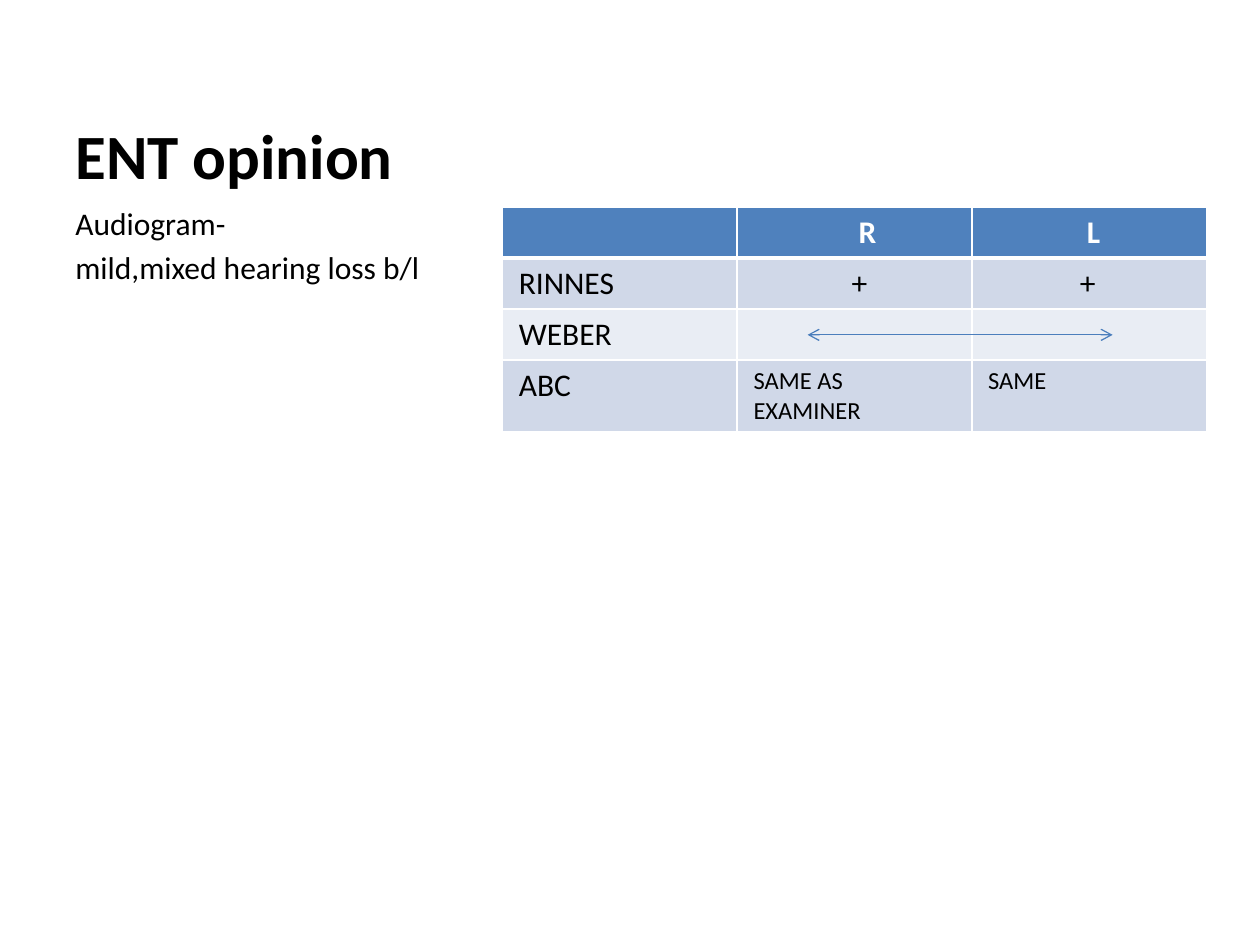
from lxml import etree
from pptx import Presentation
from pptx.dml.color import RGBColor
from pptx.enum.shapes import MSO_CONNECTOR
from pptx.enum.text import MSO_ANCHOR
from pptx.oxml.ns import qn
from pptx.util import Cm, Pt

STRAIGHT = MSO_CONNECTOR.STRAIGHT
TOP, BOTTOM = MSO_ANCHOR.TOP, MSO_ANCHOR.BOTTOM

BLACK, WHITE = "000000", "FFFFFF"
HEADER, BAND_DARK, BAND_LIGHT = "4F81BD", "D0D8E8", "E9EDF4"
ARROW = "4B7EBC"

ROWS = [
    ["", "R", "L"],
    ["RINNES", "+", "+"],
    ["WEBER", "", ""],
    ["ABC", "SAME AS EXAMINER", "SAME"],
]
ROW_HEIGHTS = [1.03, 1.03, 1.03, 1.45]
COL_WIDTH = 4.73
PAD = 0.33
# Left insets that bring the short entries near the middle of their cells
INSETS = {"R": (2.45, 2.32), "L": (2.45, 2.32), "+": (2.31, 2.18)}


def rgb(value):
    return RGBColor.from_string(value)


def style(p, size, color=BLACK, bold=False):
    fmt = {"name": "Calibri", "size": Pt(size), "bold": bold}
    for r in p.runs:
        for key, value in fmt.items():
            setattr(r.font, key, value)
        r.font.color.rgb = rgb(color)


def add_text(s, box, lines, size, bold=False, anchor=TOP):
    tf = s.shapes.add_textbox(*map(Cm, box)).text_frame
    tf.word_wrap = True
    tf.vertical_anchor = anchor
    for i, line in enumerate(lines):
        p = tf.add_paragraph() if i else tf.paragraphs[0]
        p.text = line
        if i:
            p.space_before = Pt(0.2 * size)
        style(p, size, bold=bold)


def set_borders(cell, widths):
    tc_pr = cell._tc.get_or_add_tcPr()
    for side, width in widths.items():
        ln = etree.SubElement(tc_pr, qn(f"a:ln{side}"), w=str(Pt(width)))
        fill = etree.SubElement(ln, qn("a:solidFill"))
        etree.SubElement(fill, qn("a:srgbClr"), val=WHITE)


def fill_cell(cell, row, col, text):
    # A thick rule parts the header from the body
    set_borders(cell, {"L": 1, "R": 1, "T": 3 if row == 1 else 1,
                       "B": 3 if row == 0 else 1})
    cell.fill.solid()
    bands = (BAND_LIGHT, BAND_DARK)
    cell.fill.fore_color.rgb = rgb(bands[row % 2] if row else HEADER)
    inset = INSETS[text][col - 1] if text in INSETS else PAD
    cell.margin_left, cell.margin_right = Cm(inset), Cm(PAD)
    if text:
        p = cell.text_frame.paragraphs[0]
        p.text = text
        size = 14 if text.startswith("SAME") else 18
        style(p, size, BLACK if row else WHITE, bold=row == 0)


def add_hearing_table(s, left, top):
    cols = len(ROWS[0])
    table = s.shapes.add_table(len(ROWS), cols, Cm(left), Cm(top),
                               Cm(cols * COL_WIDTH),
                               Cm(sum(ROW_HEIGHTS))).table
    for column in table.columns:
        column.width = Cm(COL_WIDTH)
    for i, (texts, height) in enumerate(zip(ROWS, ROW_HEIGHTS)):
        table.rows[i].height = Cm(height)
        for j, text in enumerate(texts):
            fill_cell(table.cell(i, j), i, j, text)


def add_double_arrow(s, x1, x2, y):
    sp = s.shapes.add_connector(STRAIGHT, Cm(x1), Cm(y), Cm(x2), Cm(y))
    sp.line.color.rgb = rgb(ARROW)
    sp.line.width = Pt(0.75)
    ln = sp.line._get_or_add_ln()
    for end in ("a:headEnd", "a:tailEnd"):
        etree.SubElement(ln, qn(end), type="arrow")
    etree.SubElement(sp._element.spPr, qn("a:effectLst"))


def main():
    prs = Presentation()
    prs.slide_width, prs.slide_height = Cm(25.4), Cm(19.05)
    s = prs.slides.add_slide(prs.slide_layouts[6])

    # Title and findings
    add_text(s, (1.27, 0.76, 8.36, 3.23), ["ENT opinion"], 36,
             bold=True, anchor=BOTTOM)
    add_text(s, (1.27, 3.99, 8.36, 13.03),
             ["Audiogram-", "mild,mixed hearing loss b/l"], 18)

    # Tuning fork tests, with the Weber result drawn across both ears
    add_hearing_table(s, 10.13, 4.17)
    add_double_arrow(s, 16.28, 22.43, 6.75)

    prs.save("out.pptx")


if __name__ == "__main__":
    main()
